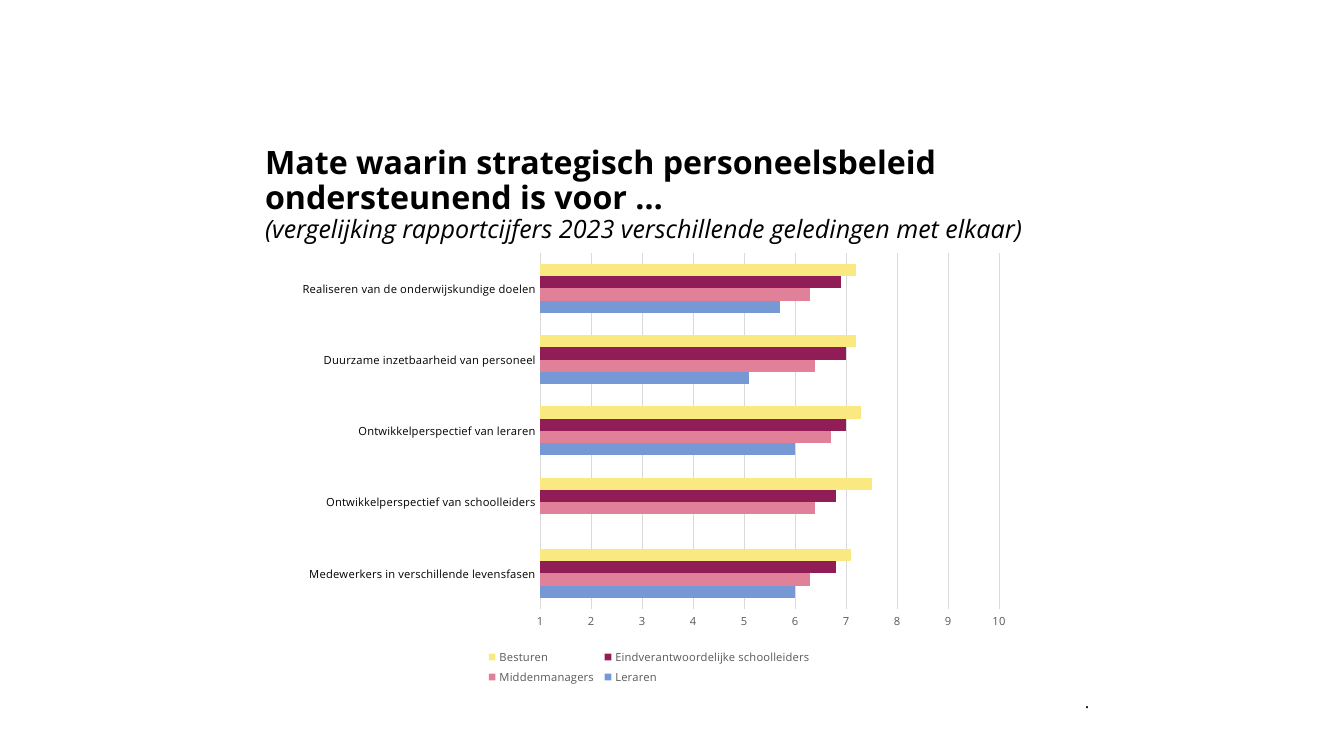
from lxml import etree
from pptx import Presentation
from pptx.chart.data import CategoryChartData
from pptx.dml.color import RGBColor
from pptx.enum.chart import XL_CHART_TYPE, XL_LEGEND_POSITION, XL_TICK_MARK
from pptx.enum.text import MSO_ANCHOR, MSO_AUTO_SIZE, PP_ALIGN
from pptx.oxml.ns import qn
from pptx.util import Pt

BAR_CLUSTERED = XL_CHART_TYPE.BAR_CLUSTERED
LEGEND_BOTTOM = XL_LEGEND_POSITION.BOTTOM
NO_TICK = XL_TICK_MARK.NONE
MIDDLE = MSO_ANCHOR.MIDDLE
NO_AUTOFIT = MSO_AUTO_SIZE.NONE
LEFT, RIGHT = PP_ALIGN.LEFT, PP_ALIGN.RIGHT

BLACK = RGBColor(0x00, 0x00, 0x00)
GREY = RGBColor(0x59, 0x59, 0x59)
LIGHT_GREY = RGBColor(0xD9, 0xD9, 0xD9)
BLUE = RGBColor(0x76, 0x98, 0xD4)
PINK = RGBColor(0xE0, 0x80, 0x99)
PURPLE = RGBColor(0x91, 0x1D, 0x56)
YELLOW = RGBColor(0xFA, 0xE9, 0x80)

CATEGORIES = [
    "Medewerkers in verschillende levensfasen",
    "Ontwikkelperspectief van schoolleiders",
    "Ontwikkelperspectief van leraren",
    "Duurzame inzetbaarheid van personeel",
    "Realiseren van de onderwijskundige doelen",
]
GROUPS = [
    ("Leraren", BLUE, (6, None, 6, 5.1, 5.7)),
    ("Middenmanagers", PINK, (6.3, 6.4, 6.7, 6.4, 6.3)),
    ("Eindverantwoordelijke schoolleiders", PURPLE, (6.8, 6.8, 7, 7, 6.9)),
    ("Besturen", YELLOW, (7.1, 7.5, 7.3, 7.2, 7.2)),
]


class SlideBuilder:
    font_name = "Open Sans"

    def __init__(self, slide):
        self.slide = slide

    def style(self, font, size, color, bold=False, italic=False):
        font.name = self.font_name
        font.size = Pt(size)
        font.color.rgb = color
        font.bold = bold
        font.italic = italic

    def place(self, box, left, top, width, height):
        box.left, box.top = Pt(left), Pt(top)
        box.width, box.height = Pt(width), Pt(height)
        frame = box.text_frame
        frame.word_wrap = True
        frame.auto_size = NO_AUTOFIT
        frame.vertical_anchor = MIDDLE
        return frame

    def title(self, heading, subheading, *area):
        frame = self.place(self.slide.shapes.title, *area)
        frame.text = f"{heading}\v{subheading}"
        para = frame.paragraphs[0]
        para.alignment = LEFT
        para.line_spacing = 0.9
        heading_span, subheading_span = para.runs
        self.style(heading_span.font, 23, BLACK, bold=True)
        self.style(subheading_span.font, 18, BLACK, italic=True)

    def body(self, text, *area):
        frame = self.place(self.slide.placeholders[1], *area)
        frame.margin_left = frame.margin_right = 0
        frame.margin_top = frame.margin_bottom = 0
        frame.text = text
        para = frame.paragraphs[0]
        properties = para._p.get_or_add_pPr()
        properties.set("marL", "0")
        properties.set("indent", "0")
        etree.SubElement(properties, qn("a:buNone"))
        para.alignment = RIGHT
        para.line_spacing = 1.1
        para.space_before = Pt(0)
        self.style(para.runs[0].font, 12, BLACK)

    def layout(self, parent, index, target, x, y, w, h):
        for old in parent.findall(qn("c:layout")):
            parent.remove(old)
        layout = etree.Element(qn("c:layout"))
        manual = etree.SubElement(layout, qn("c:manualLayout"))
        settings = [("xMode", "edge"), ("yMode", "edge"),
                    ("x", x), ("y", y), ("w", w), ("h", h)]
        if target:
            settings.insert(0, ("layoutTarget", target))
        for name, value in settings:
            etree.SubElement(manual, qn(f"c:{name}")).set("val", str(value))
        parent.insert(index, layout)

    def axis(self, axis, color):
        axis.major_tick_mark = axis.minor_tick_mark = NO_TICK
        self.style(axis.tick_labels.font, 8, color)

    def line(self, line):
        line.color.rgb = LIGHT_GREY
        line.width = Pt(0.75)

    def bar_chart(self, categories, groups, left, top, width, height):
        data = CategoryChartData()
        data.categories = categories
        for name, _, values in groups:
            data.add_series(name, values)
        chart = self.slide.shapes.add_chart(
            BAR_CLUSTERED, Pt(left), Pt(top), Pt(width), Pt(height), data).chart
        chart.has_title = False
        chart.font.name = "Calibri"
        chart.font.size = Pt(10)
        chart.font.color.rgb = BLACK

        plot = chart.plots[0]
        plot.gap_width = 182
        plot.overlap = 0
        plot.vary_by_categories = False
        for series, (_, color, _) in zip(plot.series, groups):
            series.format.fill.solid()
            series.format.fill.fore_color.rgb = color

        self.axis(chart.category_axis, BLACK)
        self.line(chart.category_axis.format.line)
        grades = chart.value_axis
        self.axis(grades, GREY)
        grades.minimum_scale, grades.maximum_scale = 1, 10
        grades.major_unit = 1
        grades.tick_labels.number_format = "0"
        grades.tick_labels.number_format_is_linked = False
        grades.format.line.fill.background()
        grades.has_major_gridlines = True
        self.line(grades.major_gridlines.format.line)

        chart.has_legend = True
        legend = chart.legend
        legend.position = LEGEND_BOTTOM
        legend.include_in_layout = False
        self.style(legend.font, 8, GREY)
        plot_area = chart._chartSpace.chart.plotArea
        self.layout(plot_area, 0, "inner", 0.35, 0.02, 0.63, 0.8)
        self.layout(legend._element, 1, None, 0.27, 0.9, 0.46, 0.1)


def main():
    deck = Presentation()
    deck.slide_width, deck.slide_height = Pt(960.48), Pt(540)
    page = SlideBuilder(deck.slides.add_slide(deck.slide_layouts[1]))
    page.title(
        "Mate waarin strategisch personeelsbeleid ondersteunend is voor …",
        "(vergelijking rapportcijfers 2023 verschillende geledingen met elkaar)",
        182.2, 94.3, 595.4, 90.7)
    page.body(".", 308.2, 484.6, 470.2, 31.7)
    page.bar_chart(CATEGORIES, GROUPS, 203.8, 174.2, 520.6, 318.2)
    deck.save("out.pptx")


if __name__ == "__main__":
    main()
